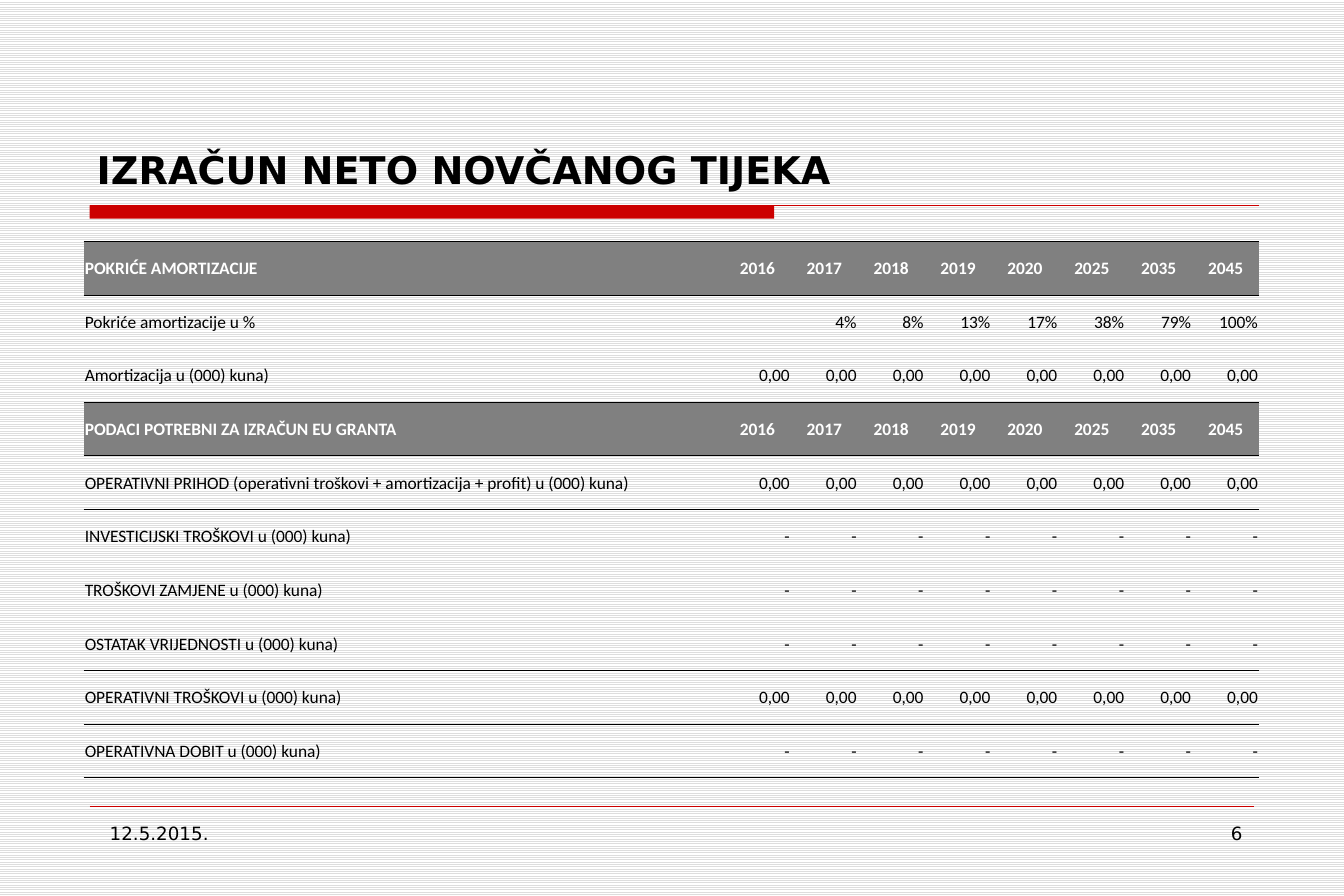
from lxml import etree
from pptx import Presentation
from pptx.dml.color import RGBColor
from pptx.enum.dml import MSO_PATTERN
from pptx.enum.shapes import MSO_CONNECTOR, MSO_SHAPE
from pptx.enum.text import MSO_ANCHOR, PP_ALIGN
from pptx.oxml.ns import qn
from pptx.util import Inches, Pt

STRIPES = MSO_PATTERN.LIGHT_HORIZONTAL
STRAIGHT = MSO_CONNECTOR.STRAIGHT
RECT = MSO_SHAPE.RECTANGLE
MIDDLE, BOTTOM = MSO_ANCHOR.MIDDLE, MSO_ANCHOR.BOTTOM
LEFT, CENTER, RIGHT = PP_ALIGN.LEFT, PP_ALIGN.CENTER, PP_ALIGN.RIGHT

COLORS = {"red": "CC0000", "gray": "808080", "black": "000000",
          "white": "FFFFFF", "stripe": "DDDDDD"}
SANS, TABLE_FONT = "DejaVu Sans", "Calibri"
PLAIN_STYLE = "{2D5ABB26-0587-4C30-8999-92F81FD0307C}"

TITLE = "IZRAČUN NETO NOVČANOG TIJEKA"
YEARS = ["2016", "2017", "2018", "2019", "2020", "2025", "2035", "2045"]
COVER = ["", "4%", "8%", "13%", "17%", "38%", "79%", "100%"]
ZEROS = ["0,00"] * len(YEARS)
DASHES = ["-"] * len(YEARS)

# label, values, rule below the row
ROWS = [
    ("POKRIĆE AMORTIZACIJE", YEARS, True),
    ("Pokriće amortizacije u %", COVER, False),
    ("Amortizacija u (000) kuna)", ZEROS, True),
    ("PODACI POTREBNI ZA IZRAČUN EU GRANTA", YEARS, True),
    ("OPERATIVNI PRIHOD (operativni troškovi + amortizacija + profit) u (000) kuna)",
     ZEROS, True),
    ("INVESTICIJSKI TROŠKOVI u (000) kuna)", DASHES, False),
    ("TROŠKOVI ZAMJENE u (000) kuna)", DASHES, False),
    ("OSTATAK VRIJEDNOSTI u (000) kuna)", DASHES, True),
    ("OPERATIVNI TROŠKOVI u (000) kuna)", ZEROS, True),
    ("OPERATIVNA DOBIT u (000) kuna)", DASHES, True),
]
# text, left, alignment
FOOTER = [("12.5.2015.", 0.82, LEFT), ("6", 8.07, RIGHT)]


def color(name):
    return RGBColor.from_string(COLORS[name])


def write(frame, text, size, face, align=LEFT, ink="black", bold=False):
    par = frame.paragraphs[0]
    par.text = text
    par.alignment = align
    font = par.font
    font.size, font.name, font.bold = Pt(size), face, bold
    font.color.rgb = color(ink)


def add_line(shapes, right, y, width):
    line = shapes.add_connector(STRAIGHT, Inches(0.75), Inches(y),
                                Inches(right), Inches(y))
    line.line.color.rgb = color("red")
    line.line.width = Pt(width)
    etree.SubElement(line._element.spPr, qn("a:effectLst"))


def set_rules(cell, top, bottom):
    """Draw the cell's top and bottom borders where asked."""
    props = cell._tc.get_or_add_tcPr()
    for spot, (tag, shown) in enumerate([("a:lnT", top), ("a:lnB", bottom)]):
        edge = etree.Element(qn(tag), w=str(Pt(0.5)))
        if shown:
            fill = etree.SubElement(edge, qn("a:solidFill"))
            etree.SubElement(fill, qn("a:srgbClr"), val=COLORS["black"])
        else:
            etree.SubElement(edge, qn("a:noFill"))
        props.insert(spot, edge)


def add_rows(shapes):
    frame = shapes.add_table(len(ROWS), len(YEARS) + 1, Inches(0.7),
                             Inches(2.02), Inches(9.84), Inches(4.49))
    table = frame.table
    table._tbl.tblPr.find(qn("a:tableStyleId")).text = PLAIN_STYLE
    for col, column in enumerate(table.columns):
        column.width = Inches(0.56 if col else 5.36)

    above = True
    for row, (label, values, below) in enumerate(ROWS):
        head = values is YEARS
        for col, text in enumerate([label] + values):
            cell = table.cell(row, col)
            cell.margin_left = cell.margin_right = cell.margin_top = Inches(0.01)
            cell.margin_bottom = 0
            cell.vertical_anchor = MIDDLE
            align = LEFT if col == 0 else CENTER if head else RIGHT
            write(cell.text_frame, text, 10.5, TABLE_FONT, align,
                  "white" if head else "black", head)
            if head:
                cell.fill.solid()
                cell.fill.fore_color.rgb = color("gray")
            else:
                cell.fill.background()
            set_rules(cell, above, below)
        above = below


def main():
    deck = Presentation()
    deck.slide_width, deck.slide_height = Inches(11.25), Inches(7.5)
    slide = deck.slides.add_slide(deck.slide_layouts[5])
    shapes = slide.shapes

    back = slide.background.fill
    back.patterned()
    back.pattern = STRIPES
    back.fore_color.rgb = color("stripe")
    back.back_color.rgb = color("white")

    bar = shapes.add_shape(RECT, Inches(0.75), Inches(1.72),
                           Inches(5.73), Inches(0.11))
    bar.shadow.inherit = False
    bar.fill.solid()
    bar.fill.fore_color.rgb = color("red")
    bar.line.fill.background()
    add_line(shapes, 10.54, 1.72, 0.75)
    add_line(shapes, 10.5, 6.75, 0.25)

    title = shapes.title
    title.left, title.top = Inches(0.71), Inches(0.33)
    title.width, title.height = Inches(9.84), Inches(1.33)
    title.text_frame.vertical_anchor = BOTTOM
    write(title.text_frame, TITLE, 23, SANS, bold=True)

    for text, left, align in FOOTER:
        box = shapes.add_textbox(Inches(left), Inches(6.83),
                                 Inches(2.43), Inches(0.52))
        box.text_frame.word_wrap = True
        write(box.text_frame, text, 11, SANS, align)

    add_rows(shapes)
    deck.save("out.pptx")


if __name__ == "__main__":
    main()
